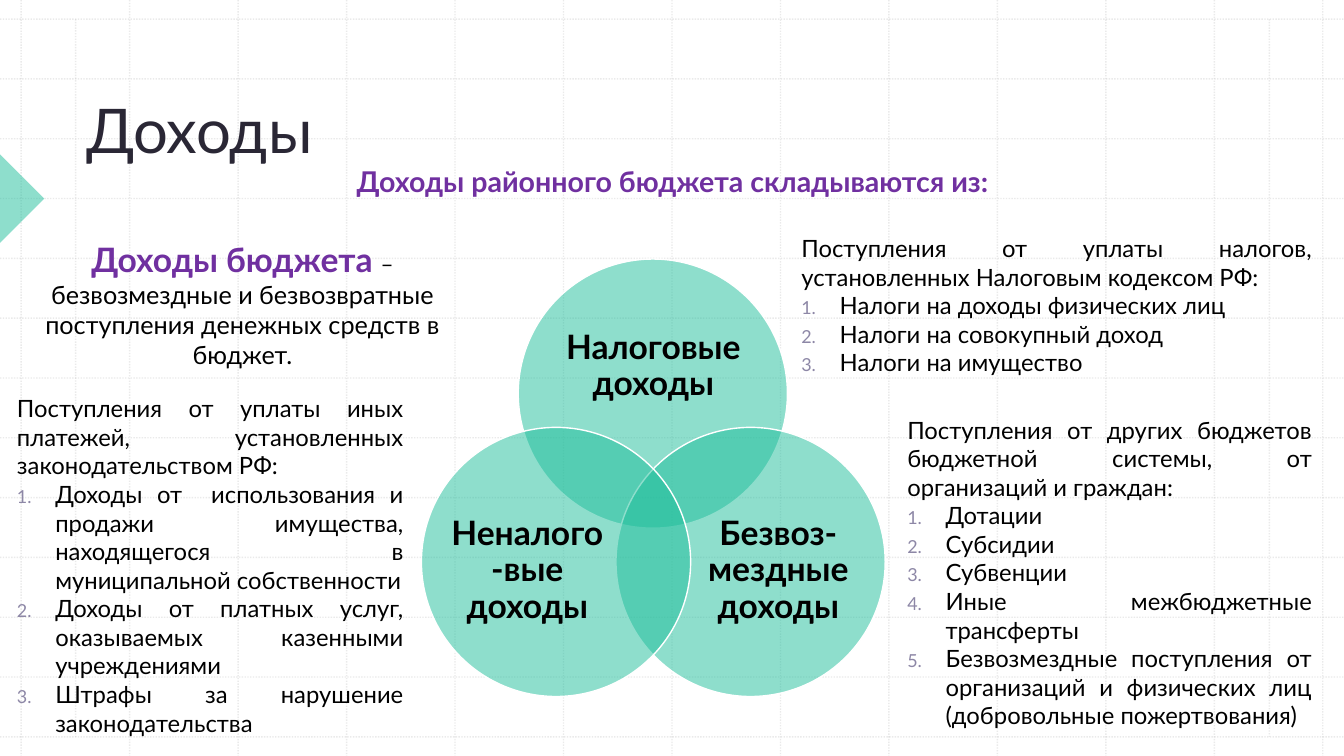
from dataclasses import dataclass

from lxml.etree import SubElement as Sub
from pptx import Presentation
from pptx.dml.color import RGBColor as RGB
from pptx.enum.dml import MSO_LINE as Dash
from pptx.enum.shapes import MSO_CONNECTOR as Conn, MSO_SHAPE as Shape
from pptx.enum.text import MSO_ANCHOR as Anchor, MSO_AUTO_SIZE as Fit, PP_ALIGN as Align
from pptx.oxml.ns import qn
from pptx.util import Inches, Pt


@dataclass(frozen=True)
class Theme:
    font: str = "Lato"
    ink: str = "000000"
    dark: str = "2A2735"
    accent: str = "7030A0"
    teal: str = "1EBE9B"
    white: str = "FFFFFF"
    grid: str = "BCBCBC"
    number: str = "8D87A6"
    title: float = 44
    large: float = 24
    head: float = 20.4
    body: float = 18
    items: float = 17
    small: float = 16


T = Theme()
WIDE, HIGH = 13.33, 7.5
LEFT, RIGHT, TOP, BOTTOM = 0.21, 13.12, 0.19, 7.31
CELLS = 12
INDENT = 0.38
DIAMETER = 2.67

# circle left, circle top, words, then left, top, width, height of the label
CIRCLES = [
    (5.14, 2.57, "Налоговые доходы", (5.5, 3.04, 1.96, 1.2)),
    (6.11, 4.24, "Безвоз-мездные доходы", (6.92, 4.93, 1.6, 1.47)),
    (4.18, 4.24, "Неналого-вые доходы", (4.43, 4.93, 1.6, 1.47)),
]

LISTS = [
    ((7.85, 2.27, 5.26, 1.75),
     "Поступления от уплаты налогов, установленных Налоговым кодексом РФ:",
     ["Налоги на доходы физических лиц",
      "Налоги на совокупный доход",
      "Налоги на имущество"]),
    ((0.07, 3.86, 4.03, 3.66),
     "Поступления от уплаты иных платежей, установленных законодательством РФ:",
     ["Доходы от  использования и продажи имущества, находящегося в "
      "муниципальной собственности",
      "Доходы от платных услуг, оказываемых казенными учреждениями",
      "Штрафы за нарушение законодательства"]),
    ((8.9, 4.07, 4.21, 3.35),
     "Поступления от других бюджетов бюджетной системы, от организаций и граждан:",
     ["Дотации",
      "Субсидии",
      "Субвенции",
      "Иные межбюджетные трансферты",
      "Безвозмездные поступления от организаций и физических лиц "
      "(добровольные пожертвования)"]),
]


def fade(fill, percent):
    """Set the opacity of a solid fill."""
    color = fill._xPr.find(qn("a:solidFill"))[0]
    Sub(color, qn("a:alpha"), val=str(percent * 1000))


def place(shape, box):
    shape.left, shape.top, shape.width, shape.height = map(Inches, box)


def write(par, words, size=T.body, color=T.ink, bold=False, align=Align.CENTER, spacing=None):
    """Add one formatted run to a paragraph."""
    par.alignment = align
    par.space_before = Pt(0)
    par.line_spacing = spacing
    run = par.add_run()
    run.text = words
    font = run.font
    font.name, font.size, font.bold = T.font, Pt(size), bold
    font.color.rgb = RGB.from_string(color)


def add_box(slide, box, anchor=Anchor.TOP, inset=None):
    shape = slide.shapes.add_textbox(*map(Inches, box))
    frame = shape.text_frame
    frame.word_wrap = True
    frame.vertical_anchor = anchor
    if inset is not None:
        frame.margin_left = frame.margin_right = Inches(inset)
        frame.margin_top = frame.margin_bottom = Inches(inset)
    return frame


def number(par):
    """Turn a paragraph into an item of a numbered list."""
    props = par._p.get_or_add_pPr()
    props.set("marL", str(Inches(INDENT)))
    props.set("indent", str(-Inches(INDENT)))
    Sub(Sub(props, qn("a:buClr")), qn("a:srgbClr"), val=T.number)
    Sub(props, qn("a:buSzPct"), val="75000")
    Sub(props, qn("a:buFont"), typeface="+mj-lt")
    Sub(props, qn("a:buAutoNum"), type="arabicPeriod")


def add_list(slide, box, lead, items):
    frame = add_box(slide, box)
    style = dict(size=T.items, align=Align.JUSTIFY)
    write(frame.paragraphs[0], lead, **style)
    for item in items:
        par = frame.add_paragraph()
        number(par)
        write(par, item, **style)


def add_rule(slide, x1, y1, x2, y2):
    rule = slide.shapes.add_connector(Conn.STRAIGHT, *map(Inches, (x1, y1, x2, y2)))
    line = rule.line
    line.width = Pt(1)
    line.color.rgb = RGB.from_string(T.grid)
    line.dash_style = Dash.ROUND_DOT
    fade(line.fill, 30)
    Sub(rule._element.spPr, qn("a:effectLst"))


def add_grid(slide):
    for i in range(CELLS + 1):
        x = LEFT + (RIGHT - LEFT) * i / CELLS
        y = TOP + (BOTTOM - TOP) * i / CELLS
        add_rule(slide, x, 0, x, HIGH)
        add_rule(slide, 0, y, WIDE, y)
    for x in (0.75, 12.59):
        add_rule(slide, x, TOP, x, BOTTOM)


def add_tint(slide, kind, box):
    """Add a half-transparent teal shape without outline."""
    shape = slide.shapes.add_shape(kind, *map(Inches, box))
    shape.shadow.inherit = False
    shape.fill.solid()
    shape.fill.fore_color.rgb = RGB.from_string(T.teal)
    fade(shape.fill, 50)
    shape.line.fill.background()
    return shape


def add_circle(slide, x, y, words, box):
    circle = add_tint(slide, Shape.OVAL, (x, y, DIAMETER, DIAMETER))
    circle.line.color.rgb = RGB.from_string(T.white)
    circle.line.width = Pt(1)
    frame = add_box(slide, box, Anchor.MIDDLE, inset=0)
    write(frame.paragraphs[0], words, size=T.large, bold=True, spacing=0.9)


def fill_holder(slide, holder, box, anchor):
    """Move a placeholder above the grid and return its paragraph."""
    slide.shapes._spTree.append(holder._element)
    place(holder, box)
    frame = holder.text_frame
    frame.word_wrap, frame.auto_size = True, Fit.NONE
    frame.vertical_anchor = anchor
    return frame.paragraphs[0]


def main():
    deck = Presentation()
    deck.slide_width, deck.slide_height = Inches(WIDE), Inches(HIGH)
    slide = deck.slides.add_slide(deck.slide_layouts[1])
    add_grid(slide)
    marker = add_tint(slide, Shape.RIGHT_TRIANGLE, (-0.31, 1.66, 0.62, 0.62))
    marker.rotation = 225

    par = fill_holder(slide, slide.shapes.title, (0.76, 0.79, 11.29, 0.91), Anchor.BOTTOM)
    write(par, "Доходы", size=T.title, color=T.dark, align=Align.LEFT)

    for circle in CIRCLES:
        add_circle(slide, *circle)

    par = fill_holder(slide, slide.placeholders[1], (0.32, 2.32, 4.17, 1.5), Anchor.TOP)
    props = par._p.get_or_add_pPr()
    props.set("marL", "0")
    props.set("indent", "0")
    Sub(props, qn("a:buNone"))
    write(par, "Доходы бюджета ", size=T.large, color=T.accent, bold=True)
    write(par, "– ", size=T.small)
    write(par, "безвозмездные и безвозвратные поступления денежных средств в бюджет.")

    for entry in LISTS:
        add_list(slide, *entry)

    head = add_box(slide, (3.04, 1.58, 7.26, 0.54))
    write(head.paragraphs[0], "Доходы районного бюджета складываются из:",
          size=T.head, color=T.accent, bold=True)
    deck.save("out.pptx")


if __name__ == "__main__":
    main()
